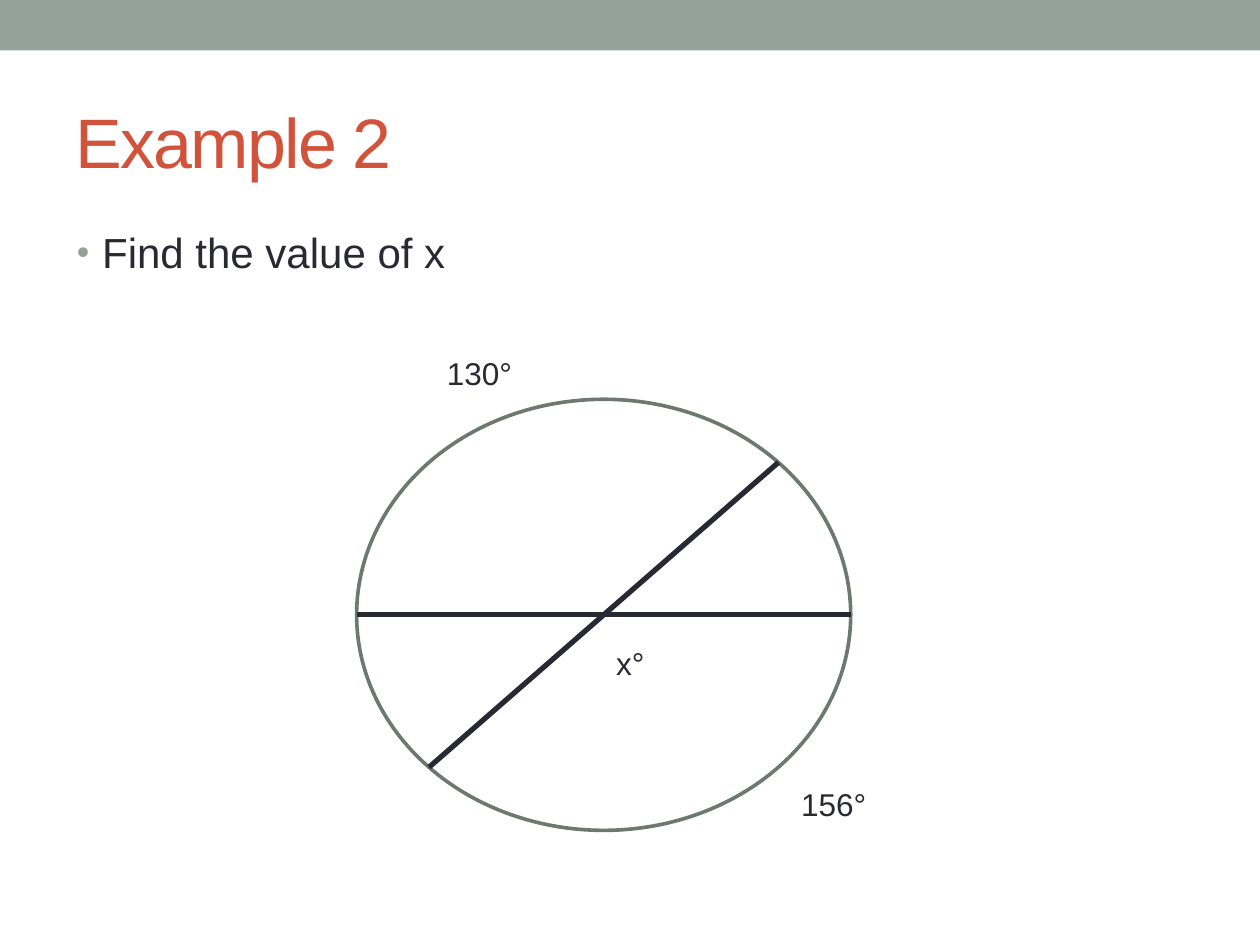
from dataclasses import dataclass
from math import cos, pi, sin

from lxml import etree
from pptx import Presentation
from pptx.dml.color import RGBColor
from pptx.enum.shapes import MSO_CONNECTOR, MSO_SHAPE
from pptx.enum.text import MSO_ANCHOR, MSO_AUTO_SIZE
from pptx.oxml.ns import qn
from pptx.util import Cm, Pt

RECT, OVAL = MSO_SHAPE.RECTANGLE, MSO_SHAPE.OVAL
STRAIGHT = MSO_CONNECTOR.STRAIGHT
TOP, MIDDLE = MSO_ANCHOR.TOP, MSO_ANCHOR.MIDDLE
FIT_SHAPE = MSO_AUTO_SIZE.SHAPE_TO_FIT_TEXT


@dataclass(frozen=True)
class Theme:
    font: str = "Arial"
    band: RGBColor = RGBColor(0x93, 0xA2, 0x99)
    title: RGBColor = RGBColor(0xD2, 0x53, 0x3C)
    ink: RGBColor = RGBColor(0x29, 0x29, 0x34)
    outline: RGBColor = RGBColor(0x6D, 0x78, 0x71)
    title_size: Pt = Pt(40)
    body_size: Pt = Pt(24)
    label_size: Pt = Pt(18)


THEME = Theme()


def add_text(slide, box, text, size, color, anchor=TOP, wrap=True):
    """Add a one-paragraph text box; box is left, top, width, height in cm."""
    tf = slide.shapes.add_textbox(*map(Cm, box)).text_frame
    tf.word_wrap = wrap
    tf.vertical_anchor = anchor
    p = tf.paragraphs[0]
    p.text = text
    p.font.name, p.font.size = THEME.font, size
    p.font.color.rgb = color
    return tf


def add_band(slide, box):
    sp = slide.shapes.add_shape(RECT, *map(Cm, box))
    sp.shadow.inherit = False
    sp.fill.solid()
    sp.fill.fore_color.rgb = THEME.band
    sp.line.fill.background()


def add_title(slide, box, text):
    tf = add_text(slide, box, text, THEME.title_size, THEME.title, MIDDLE)
    # Tighten the letter spacing by one point
    tf.paragraphs[0].runs[0].font._element.set("spc", "-100")


def add_body(slide, box, text):
    p = add_text(slide, box, text, THEME.body_size, THEME.ink).paragraphs[0]
    p.space_before = Pt(2)
    # Hanging bullet
    pPr = p._p.get_or_add_pPr()
    pPr.set("marL", str(Cm(0.51)))
    pPr.set("indent", str(Cm(-0.51)))
    bullet = [etree.Element(qn("a:buClr")),
              etree.Element(qn("a:buSzPct"), val="85000"),
              etree.Element(qn("a:buFont"), typeface=THEME.font),
              etree.Element(qn("a:buChar"), char="•")]
    etree.SubElement(bullet[0], qn("a:srgbClr"), val=str(THEME.band))
    at = list(pPr).index(pPr.find(qn("a:spcBef"))) + 1
    pPr[at:at] = bullet


def add_chord(slide, start, end):
    line = slide.shapes.add_connector(STRAIGHT, *map(Cm, start + end))
    line.line.color.rgb = THEME.ink
    line.line.width = Pt(3)
    etree.SubElement(line._element.spPr, qn("a:effectLst"))


def add_circle_diagram(slide, box):
    left, top, width, height = box
    rx, ry = width / 2, height / 2
    cx, cy = left + rx, top + ry

    # Circle
    sp = slide.shapes.add_shape(OVAL, *map(Cm, box))
    sp.shadow.inherit = False
    sp.fill.background()
    sp.line.color.rgb = THEME.outline
    sp.line.width = Pt(2.08)

    # Chords through the centre
    for angle in (pi / 4, 0):
        dx, dy = rx * cos(angle), ry * sin(angle)
        add_chord(slide, (cx - dx, cy + dy), (cx + dx, cy - dy))

    # Arc and angle labels, offset from the corner of the diagram
    for text, dx, dy, w, wrap in (("130°", 1.57, -1.04, 2.03, True),
                                  ("x°", 4.98, 4.8, 1.09, False),
                                  ("156°", 8.71, 7.65, 1.83, False)):
        tf = add_text(slide, (left + dx, top + dy, w, 1.02), text,
                      THEME.label_size, THEME.ink, wrap=wrap)
        tf.auto_size = FIT_SHAPE


def main():
    prs = Presentation()
    prs.slide_width, prs.slide_height = Cm(25.4), Cm(19.05)
    slide = prs.slides.add_slide(prs.slide_layouts[6])
    add_band(slide, (0, 0, 25.4, 1.02))
    add_title(slide, (1.27, 1.47, 22.86, 2.74), "Example 2")
    add_body(slide, (1.3, 4.45, 22.86, 13.54), "Find the value of x")
    add_circle_diagram(slide, (7.19, 8.05, 9.96, 8.69))
    prs.save("out.pptx")


if __name__ == "__main__":
    main()
